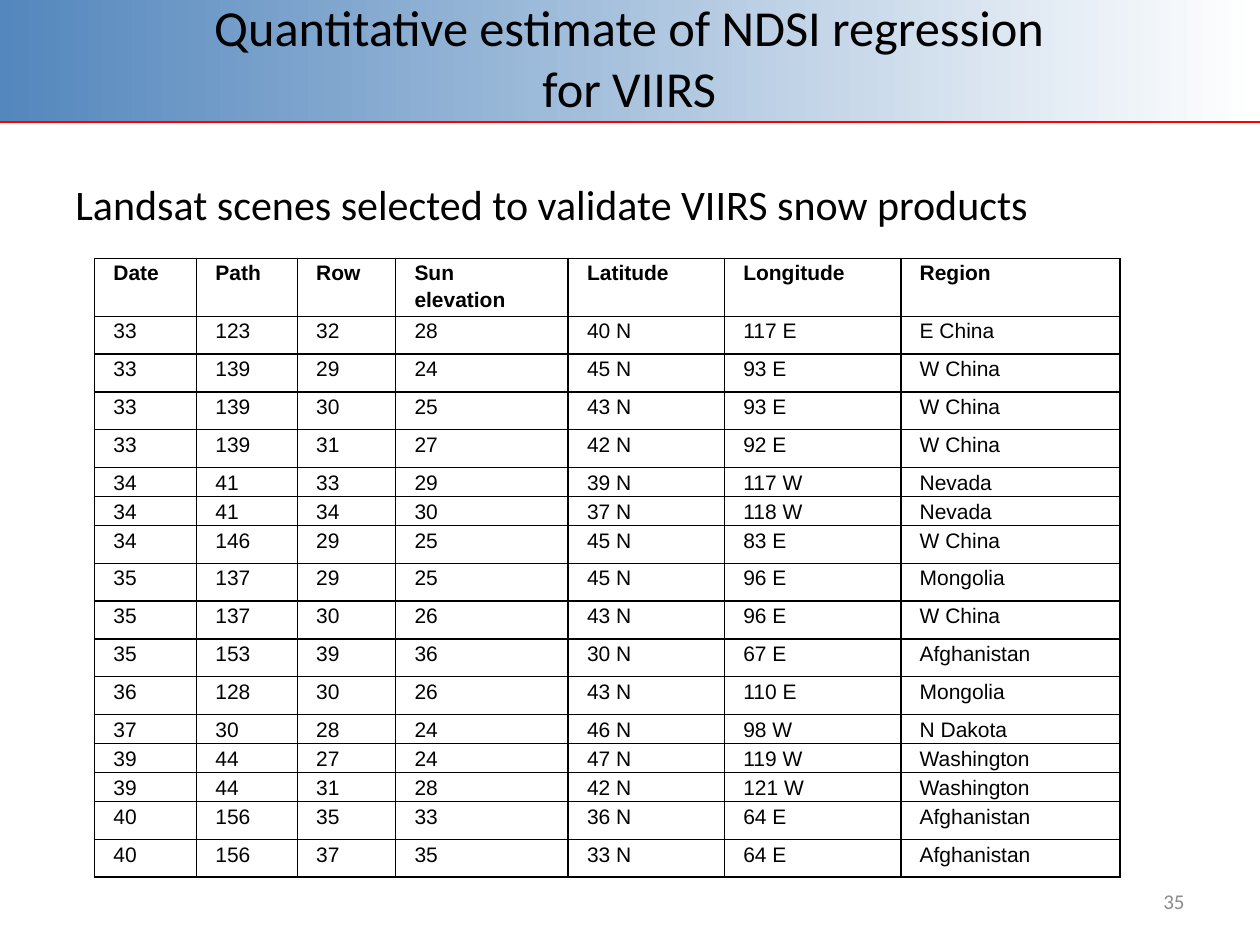
from dataclasses import dataclass

from lxml import etree
from pptx import Presentation
from pptx.dml.color import RGBColor
from pptx.enum import shapes, text
from pptx.oxml import ns
from pptx.util import Inches, Pt


@dataclass(frozen=True)
class Theme:
    ink: str = "000000"
    band_start: str = "5487BD"
    band_end: str = "FFFFFF"
    rule: str = "FF0000"
    muted: str = "8C8C8C"
    heading_font: str = "Calibri"
    table_font: str = "Arial"
    title_size: float = 28.8
    lead_size: float = 24
    small_size: float = 12


class SlideBuilder:
    def __init__(self, slide, theme):
        self.slide = slide
        self.theme = theme

    def style(self, paragraph, size, color, font, bold=False):
        for run in paragraph.runs:
            run.font.size = Pt(size)
            run.font.name = font
            run.font.bold = bold
            run.font.color.rgb = RGBColor.from_string(color)

    def band(self, left, top, width, height):
        band = self.slide.shapes.add_shape(
            shapes.MSO_SHAPE.RECTANGLE, *map(Inches, (left, top, width, height)))
        band.shadow.inherit = False
        band.line.fill.background()
        band.fill.gradient()
        band.fill.gradient_angle = 0
        ends = (self.theme.band_start, self.theme.band_end)
        for stop, color in zip(band.fill.gradient_stops, ends):
            stop.color.rgb = RGBColor.from_string(color)

    def rule(self, left, right, y):
        rule = self.slide.shapes.add_connector(
            shapes.MSO_CONNECTOR.STRAIGHT, *map(Inches, (left, y, right, y)))
        rule.line.color.rgb = RGBColor.from_string(self.theme.rule)
        rule.line.width = Pt(1.25)
        etree.SubElement(rule._element.spPr, ns.qn("a:effectLst"))

    def text(self, words, left, top, width, height, size, color,
             align, anchor=text.MSO_ANCHOR.MIDDLE):
        box = self.slide.shapes.add_textbox(
            *map(Inches, (left, top, width, height)))
        frame = box.text_frame
        frame.word_wrap = True
        frame.vertical_anchor = anchor
        paragraph = frame.paragraphs[0]
        paragraph.text = words
        paragraph.alignment = align
        self.style(paragraph, size, color, self.theme.heading_font)

    def borders(self, cell):
        properties = cell._tc.get_or_add_tcPr()
        for side in ("lnL", "lnR", "lnT", "lnB"):
            line = etree.SubElement(properties, ns.qn(f"a:{side}"), w=str(Pt(1)))
            fill = etree.SubElement(line, ns.qn("a:solidFill"))
            etree.SubElement(fill, ns.qn("a:srgbClr"), val=self.theme.ink)

    def cell(self, cell, words, bold):
        cell.margin_left, cell.margin_right = Inches(0.05), Inches(0.2)
        cell.margin_top = cell.margin_bottom = 0
        self.borders(cell)
        cell.fill.background()
        paragraph = cell.text_frame.paragraphs[0]
        paragraph.text = words
        paragraph.alignment = text.PP_ALIGN.JUSTIFY
        paragraph.line_spacing = 1.15
        paragraph.space_after = Pt(6)
        indent = paragraph._p.get_or_add_pPr()
        indent.set("marL", str(Inches(0.1)))
        indent.set("indent", "0")
        self.style(paragraph, self.theme.small_size, self.theme.ink,
                   self.theme.table_font, bold)

    def table(self, rows, left, top, widths, heights):
        table = self.slide.shapes.add_table(
            len(rows), len(widths), Inches(left), Inches(top),
            Inches(sum(widths)), Inches(sum(heights))).table
        table.first_row = table.horz_banding = False
        for column, width in zip(table.columns, widths):
            column.width = Inches(width)
        for index, (row, height) in enumerate(zip(rows, heights)):
            table.rows[index].height = Inches(height)
            for cell, words in zip(table.rows[index].cells, row):
                self.cell(cell, words, bold=index == 0)


HEADINGS = ["Date", "Path", "Row", "Sun elevation", "Latitude", "Longitude", "Region"]
SCENES = [line.split(",") for line in """\
33,123,32,28,40 N,117 E,E China
33,139,29,24,45 N,93 E,W China
33,139,30,25,43 N,93 E,W China
33,139,31,27,42 N,92 E,W China
34,41,33,29,39 N,117 W,Nevada
34,41,34,30,37 N,118 W,Nevada
34,146,29,25,45 N,83 E,W China
35,137,29,25,45 N,96 E,Mongolia
35,137,30,26,43 N,96 E,W China
35,153,39,36,30 N,67 E,Afghanistan
36,128,30,26,43 N,110 E,Mongolia
37,30,28,24,46 N,98 W,N Dakota
39,44,27,24,47 N,119 W,Washington
39,44,31,28,42 N,121 W,Washington
40,156,35,33,36 N,64 E,Afghanistan
40,156,37,35,33 N,64 E,Afghanistan""".splitlines()]
COLUMN_WIDTHS = [0.81, 0.8, 0.78, 1.37, 1.24, 1.4, 1.74]


def main():
    presentation = Presentation()
    presentation.slide_width, presentation.slide_height = Inches(10), Inches(7.5)
    theme = Theme()
    builder = SlideBuilder(
        presentation.slides.add_slide(presentation.slide_layouts[6]), theme)

    # Header band and title
    builder.band(0, -0.01, 10, 0.97)
    builder.rule(0, 10, 0.97)
    builder.text("Quantitative estimate of NDSI regression \vfor VIIRS ",
                 1.08, 0, 7.92, 0.9, theme.title_size, theme.ink,
                 text.PP_ALIGN.CENTER)

    # Lead sentence
    builder.text("Landsat scenes selected to validate VIIRS snow products",
                 0.5, 1.37, 9, 5.99, theme.lead_size, theme.ink,
                 text.PP_ALIGN.JUSTIFY, text.MSO_ANCHOR.TOP)

    # Page number
    builder.text("35", 7.17, 6.95, 2.33, 0.4, theme.small_size, theme.muted,
                 text.PP_ALIGN.RIGHT)

    # Scene table: rows in the western hemisphere are shorter
    heights = [0.44] + [0.22 if scene[5].endswith("W") else 0.3 for scene in SCENES]
    builder.table([HEADINGS] + SCENES, 0.75, 2.05, COLUMN_WIDTHS, heights)

    presentation.save("out.pptx")


if __name__ == "__main__":
    main()
